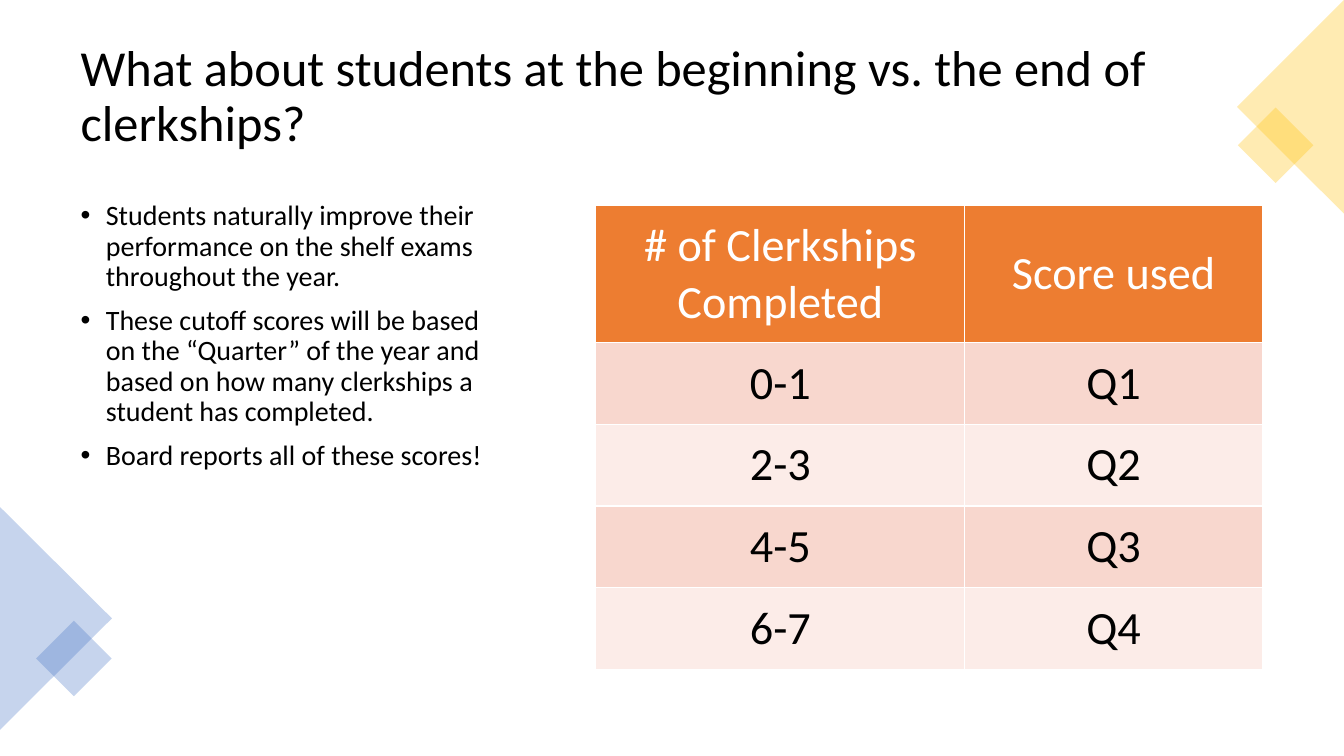
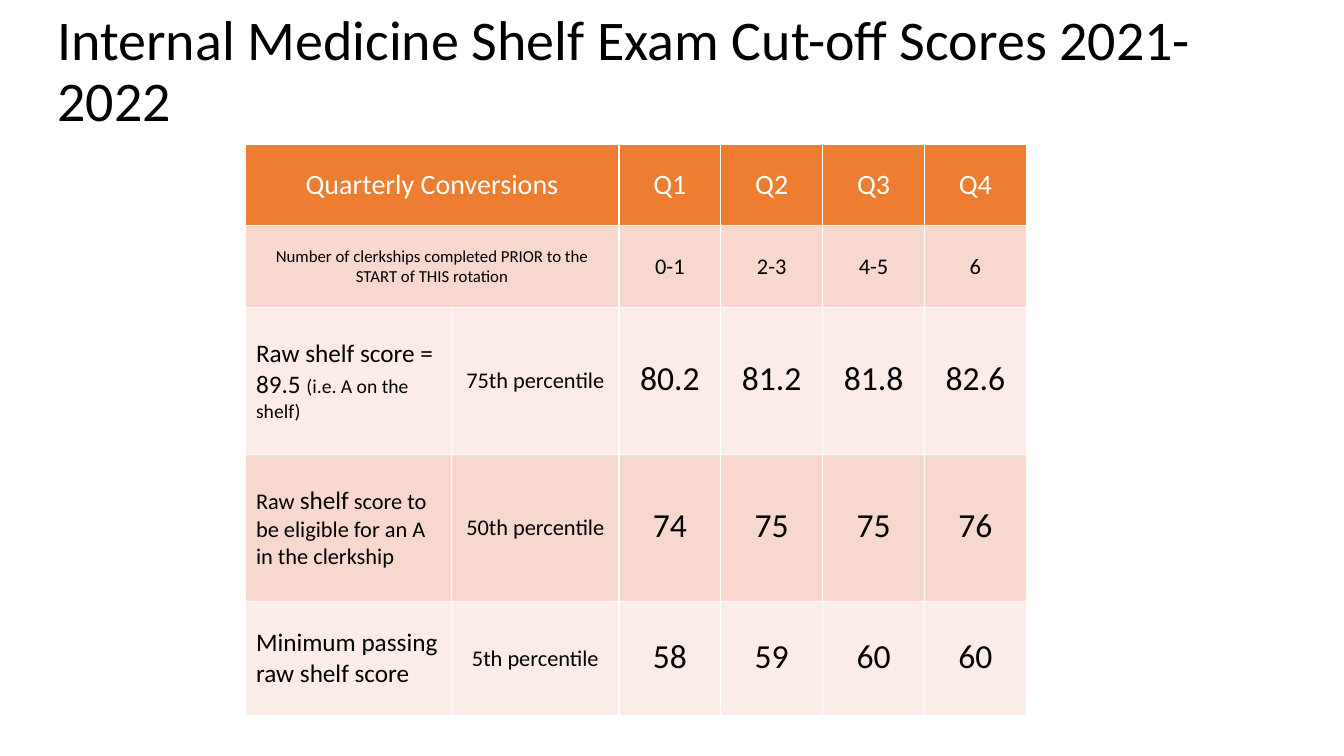
"""Build two slides on shelf exam cut-off scores."""
from collections import namedtuple
from dataclasses import dataclass

from lxml import etree
from pptx import Presentation
from pptx import util as u
from pptx.dml import color
from pptx.enum import shapes, text
from pptx.oxml import ns

Box = namedtuple("Box", "left top width height")


@dataclass(frozen=True)
class Theme:
    """Colours, font, type sizes and cell insets shared by the slides."""
    ink: str = "000000"
    paper: str = "FFFFFF"
    header: str = "ED7D31"
    bands: tuple = ("F8D7CE", "FCECE8")
    blue: str = "4472C4"
    gold: str = "FFC000"
    opacity: int = 30
    font: str = "Calibri"
    title: int = 36
    title_large: int = 40
    body: int = 20
    quarter: int = 33
    score: int = 24
    heading: int = 20
    label: int = 18
    detail: int = 16
    aside: int = 14
    fine: int = 12
    roomy: tuple = (0.18, 0.09, 0.18, 0.09)
    snug: tuple = (0.11, 0.06, 0.11, 0.06)
    tight: tuple = (0.01, 0.01, 0.01, 0.05)


THEME = Theme()
LEFT, CENTER = text.PP_ALIGN.LEFT, text.PP_ALIGN.CENTER


def rgb(value):
    """Turn a hex string into a colour."""
    return color.RGBColor.from_string(value)


def style_run(run, size, ink=THEME.ink):
    """Give a run the theme font, a size and a colour."""
    run.font.name = THEME.font
    run.font.size = u.Pt(size)
    run.font.bold = False
    run.font.color.rgb = rgb(ink)


def place(shape, box):
    """Move a shape to a box given in inches."""
    shape.left, shape.top, shape.width, shape.height = map(u.Inches, box)


def set_title(slide, box, wording, size):
    """Fill and place the title placeholder."""
    title = slide.shapes.title
    place(title, box)
    frame = title.text_frame
    frame.text = wording
    frame.word_wrap = True
    frame.auto_size = text.MSO_AUTO_SIZE.NONE
    frame.vertical_anchor = text.MSO_ANCHOR.MIDDLE
    heading = frame.paragraphs[0]
    heading.alignment = LEFT
    heading.line_spacing = 0.9
    style_run(heading.runs[0], size)


def set_points(slide, box, points):
    """Fill and place the body placeholder as a bulleted list."""
    body = slide.placeholders[1]
    place(body, box)
    frame = body.text_frame
    frame.text = "\n".join(points)
    frame.word_wrap = True
    frame.auto_size = text.MSO_AUTO_SIZE.NONE
    for point in frame.paragraphs:
        point.line_spacing = 0.9
        point.space_before = u.Pt(10)
        properties = point._p.get_or_add_pPr()
        properties.set("marL", str(u.Inches(0.25)))
        properties.set("indent", str(u.Inches(-0.25)))
        style_run(point.runs[0], THEME.body)


def add_tint(group, kind, center, size, rotation, tint):
    """Add a translucent rotated shape around a centre."""
    (x, y), (width, height) = center, size
    shape = group.shapes.add_shape(kind, *map(u.Inches, (
        x - width / 2, y - height / 2, width, height)))
    shape.rotation = rotation
    shape.shadow.inherit = False
    shape.line.fill.background()
    shape.fill.solid()
    shape.fill.fore_color.rgb = rgb(tint)
    solid = shape.fill._xPr.find(ns.qn("a:solidFill"))
    alpha = etree.SubElement(solid[0], ns.qn("a:alpha"))
    alpha.set("val", str(THEME.opacity * 1000))


def add_corner(slide, box, tint, points_right):
    """Add an edge triangle with a diamond overlapping its lower side."""
    group = slide.shapes.add_group_shape()
    middle = (box.left + box.width / 2, box.top + box.height / 2)
    add_tint(group, shapes.MSO_SHAPE.ISOSCELES_TRIANGLE, middle,
             (box.height, box.width), 90 if points_right else 270, tint)
    across = 0.66 if points_right else 0.36
    diamond = (box.left + across * box.width, box.top + 0.68 * box.height)
    add_tint(group, shapes.MSO_SHAPE.RECTANGLE, diamond,
             (0.53, 0.53), 45, tint)


def fill_cell(cell, runs, row, insets, align=CENTER):
    """Write sized runs into a cell coloured by its row."""
    cell.fill.solid()
    cell.fill.fore_color.rgb = rgb(
        THEME.bands[(row - 1) % 2] if row else THEME.header)
    cell.vertical_anchor = text.MSO_ANCHOR.MIDDLE
    (cell.margin_left, cell.margin_top,
     cell.margin_right, cell.margin_bottom) = map(u.Inches, insets)
    line = cell.text_frame.paragraphs[0]
    line.alignment = align
    for wording, size in runs:
        run = line.add_run()
        run.text = wording
        style_run(run, size, THEME.ink if row else THEME.paper)


def add_grid(slide, box, widths, heights):
    """Add an empty table with the given column widths and row heights."""
    frame = slide.shapes.add_table(
        len(heights), len(widths), *map(u.Inches, box))
    grid = frame.table
    for column, width in zip(grid.columns, widths):
        column.width = u.Inches(width)
    for row, height in zip(grid.rows, heights):
        row.height = u.Inches(height)
    return grid


def add_quarter_table(slide, box):
    """Add the table of clerkships completed and quarter used."""
    entries = [("# of Clerkships Completed", "Score used"),
               ("0-1", "Q1"), ("2-3", "Q2"), ("4-5", "Q3"), ("6-7", "Q4")]
    grid = add_grid(slide, box, (3.66, 2.95), [1.36] + [0.81] * 4)
    for row, entry in enumerate(entries):
        for column, wording in enumerate(entry):
            fill_cell(grid.cell(row, column), [(wording, THEME.quarter)],
                      row, THEME.roomy)


def add_score_table(slide, box):
    """Add the table of cut-off scores by quarter."""
    grid = add_grid(slide, box, [2.05, 1.66] + [1.01] * 4,
                    (0.81, 0.81, 1.46, 1.46, 1.13))
    spanning = [
        ("Quarterly Conversions", THEME.heading,
         ("Q1", "Q2", "Q3", "Q4"), THEME.heading),
        ("Number of clerkships completed PRIOR to the START of THIS rotation",
         THEME.fine, ("0-1", "2-3", "4-5", "6"), THEME.detail)]
    for row, (label, label_size, quarters, size) in enumerate(spanning):
        grid.cell(row, 0).merge(grid.cell(row, 1))
        fill_cell(grid.cell(row, 0), [(label, label_size)], row, THEME.snug)
        for column, quarter in enumerate(quarters, 2):
            fill_cell(grid.cell(row, column), [(quarter, size)],
                      row, THEME.snug)
    cutoffs = [
        ([("Raw shelf score = 89.5 ", THEME.label),
          ("(i.e. A on the shelf)", THEME.aside)],
         "75th percentile", ("80.2", "81.2", "81.8", "82.6")),
        ([("Raw ", THEME.detail), ("shelf", THEME.label),
          (" score to be eligible for an A in the clerkship", THEME.detail)],
         "50th percentile", ("74", "75", "75", "76")),
        ([("Minimum passing raw shelf score", THEME.label)],
         "5th percentile", ("58", "59", "60", "60"))]
    for row, (meaning, percentile, scores) in enumerate(cutoffs, 2):
        fill_cell(grid.cell(row, 0), meaning, row, THEME.snug, LEFT)
        fill_cell(grid.cell(row, 1), [(percentile, THEME.detail)],
                  row, THEME.snug)
        for column, score in enumerate(scores, 2):
            fill_cell(grid.cell(row, column), [(score, THEME.score)],
                      row, THEME.tight)


def build_timing_slide(deck):
    """Build the slide on how timing sets the score used."""
    slide = deck.slides.add_slide(deck.slide_layouts[1])
    set_title(slide, Box(0.7, 0.35, 11.93, 1.24),
              "What about students at the beginning vs. the end of "
              "clerkships?", THEME.title)
    set_points(slide, Box(0.7, 1.95, 4.38, 4.81), [
        "Students naturally improve their performance on the shelf exams "
        "throughout the year.",
        "These cutoff scores will be based on the “Quarter” of the year and "
        "based on how many clerkships a student has completed.",
        "Board reports all of these scores!"])
    add_corner(slide, Box(0, 5.03, 1.11, 2.21), THEME.blue, True)
    add_corner(slide, Box(12.27, 0, 1.06, 2.12), THEME.gold, False)
    add_quarter_table(slide, Box(5.91, 2.04, 6.61, 4.6))


def build_cutoff_slide(deck):
    """Build the slide of cut-off scores."""
    slide = deck.slides.add_slide(deck.slide_layouts[5])
    set_title(slide, Box(0.47, 0, 12.56, 1.45),
              "Internal Medicine Shelf Exam Cut-off Scores 2021-2022",
              THEME.title_large)
    add_score_table(slide, Box(2.43, 1.43, 7.75, 5.67))


def main():
    """Build and save the presentation."""
    deck = Presentation()
    deck.slide_width, deck.slide_height = u.Inches(13.33), u.Inches(7.5)
    build_timing_slide(deck)
    build_cutoff_slide(deck)
    deck.save("out.pptx")


if __name__ == "__main__":
    main()
